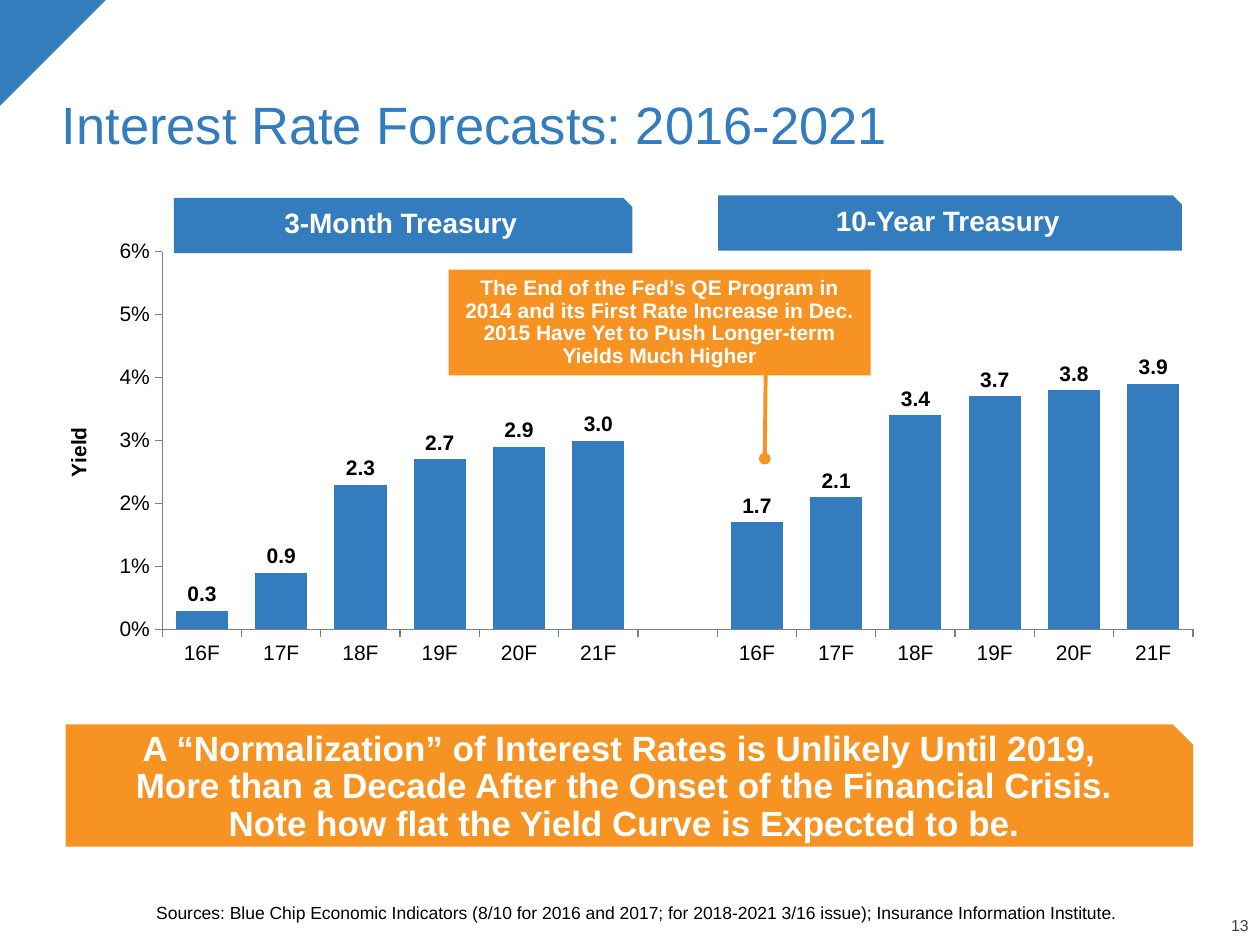
from dataclasses import dataclass
from pptx import Presentation
from pptx.chart.data import CategoryChartData
from pptx.dml.color import RGBColor as RGB
from pptx.enum.chart import XL_CHART_TYPE as Kind, XL_LABEL_POSITION as Spot, XL_TICK_MARK as Tick
from pptx.enum.shapes import MSO_CONNECTOR as Conn, MSO_SHAPE as Form
from pptx.enum.text import MSO_ANCHOR as Anchor, MSO_AUTO_SIZE as Fit, PP_ALIGN as Align
from pptx.oxml.ns import qn
from pptx.oxml.xmlchemy import OxmlElement as Elem
from pptx.util import Inches, Pt


@dataclass(frozen=True)
class Theme:
    face: str = "Arial"
    blue: RGB = RGB(0x33, 0x7D, 0xBE)
    orange: RGB = RGB(0xF6, 0x93, 0x22)
    white: RGB = RGB(255, 255, 255)
    black: RGB = RGB(0, 0, 0)
    dark: RGB = RGB(0x40, 0x40, 0x40)
    gray: RGB = RGB(0x80, 0x80, 0x80)
    title: int = 30
    lead: int = 20
    head: int = 16
    label: int = 12
    note: int = 10
    page: int = 9


T = Theme()
PAD = (0.1, 0.05, 0.1, 0.05)
DEEP = (0.1, 0.05, 0.1, 0.1)
FLUSH = (0, 0, 0, 0)


def style(font, size, color, bold=False):
    font.name = T.face
    font.size = Pt(size)
    font.color.rgb = color
    font.bold = bold


def write(shape, text, size, color, bold=False, align=Align.LEFT, anchor=Anchor.BOTTOM, pad=PAD):
    frame = shape.text_frame
    frame.auto_size = Fit.NONE
    frame.word_wrap = True
    frame.vertical_anchor = anchor
    (frame.margin_left, frame.margin_top,
     frame.margin_right, frame.margin_bottom) = map(Inches, pad)
    para = frame.paragraphs[0]
    para.text = text
    para.alignment = align
    para.line_spacing = 0.9
    style(para.font, size, color, bold)


def add_form(slide, form, box, fill):
    shape = slide.shapes.add_shape(form, *map(Inches, box))
    shape.shadow.inherit = False
    shape.fill.solid()
    shape.fill.fore_color.rgb = fill
    shape.line.fill.background()
    return shape


def add_panel(slide, form, box, fill, text, size, pad=DEEP):
    panel = add_form(slide, form, box, fill)
    write(panel, text, size, T.white, True, Align.CENTER, Anchor.MIDDLE, pad)


def add_text(slide, box, text, size, color, align=Align.LEFT):
    write(slide.shapes.add_textbox(*map(Inches, box)), text, size, color, align=align, pad=FLUSH)


def add_title(slide, box, text):
    title = slide.shapes.title
    title.left, title.top, title.width, title.height = map(Inches, box)
    write(title, text, T.title, T.blue)


def add_pin(slide, start, end):
    pin = slide.shapes.add_connector(Conn.STRAIGHT, *map(Inches, start + end))
    pin.line.color.rgb = T.orange
    pin.line.width = Pt(2.25)
    tail = Elem("a:tailEnd")
    tail.set("type", "oval")
    pin.line._get_or_add_ln().append(tail)
    pin._element.spPr.append(Elem("a:effectLst"))


def place_plot(chart, x, y, w, h):
    area = chart._chartSpace.find(".//" + qn("c:plotArea"))
    old = area.find(qn("c:layout"))
    if old is not None:
        area.remove(old)
    layout, manual = Elem("c:layout"), Elem("c:manualLayout")
    rules = (("layoutTarget", "inner"), ("xMode", "edge"), ("yMode", "edge"),
             ("x", x), ("y", y), ("w", w), ("h", h))
    for tag, val in rules:
        item = Elem("c:" + tag)
        item.set("val", str(val))
        manual.append(item)
    layout.append(manual)
    area.insert(0, layout)


def format_axes(chart):
    for axis in (chart.category_axis, chart.value_axis):
        axis.has_major_gridlines = False
        axis.major_tick_mark = Tick.OUTSIDE
        axis.minor_tick_mark = Tick.NONE
        axis.format.line.color.rgb = T.gray
        style(axis.tick_labels.font, T.label, T.black)
    scale = chart.value_axis
    scale.minimum_scale, scale.maximum_scale, scale.major_unit = 0, 6, 1
    scale.tick_labels.number_format = '0"%"'
    scale.tick_labels.number_format_is_linked = False
    frame = scale.axis_title.text_frame
    frame.text = "Yield"
    frame._txBody.bodyPr.set("rot", "-5400000")
    style(frame.paragraphs[0].font, T.label, T.black, True)


def add_bars(slide, box, cats, vals):
    data = CategoryChartData()
    data.categories = cats
    data.add_series("Series 1", vals)
    chart = slide.shapes.add_chart(Kind.COLUMN_CLUSTERED, *map(Inches, box), data).chart
    chart.has_legend = False
    chart.has_title = False
    style(chart.font, 18, T.black)
    plot = chart.plots[0]
    plot.gap_width = 52
    plot.vary_by_categories = False
    bars = plot.series[0]
    bars.format.fill.solid()
    bars.format.fill.fore_color.rgb = T.blue
    labels = bars.data_labels
    labels.show_value = True
    labels.position = Spot.OUTSIDE_END
    labels.number_format = "#,##0.0"
    labels.number_format_is_linked = False
    style(labels.font, T.label, T.black, True)
    format_axes(chart)
    place_plot(chart, 0.094, 0.069, 0.896, 0.746)


def main():
    deck = Presentation()
    deck.slide_width, deck.slide_height = Inches(10), Inches(7.5)
    slide = deck.slides.add_slide(deck.slide_layouts[5])
    add_form(slide, Form.RIGHT_TRIANGLE, (0, 0, 0.84, 0.84), T.blue).rotation = 90
    add_title(slide, (0.39, 0.25, 9.25, 1.04), "Interest Rate Forecasts: 2016-2021")

    years = [f"{year}F" for year in range(16, 22)]
    short = [0.3, 0.9, 2.3, 2.7, 2.9, 3.0]
    long = [1.7, 2.1, 3.4, 3.7, 3.8, 3.9]
    add_bars(slide, (0.43, 1.72, 9.13, 4.02), years + [""] + years, short + [None] + long)

    add_panel(slide, Form.SNIP_1_RECTANGLE, (0.52, 5.75, 8.95, 0.97), T.orange,
              "A “Normalization” of Interest Rates is Unlikely Until 2019, \v"
              "More than a Decade After the Onset of the Financial Crisis.\v"
              "Note how flat the Yield Curve is Expected to be.", T.lead)
    for box, text in (((1.38, 1.57, 3.64, 0.44), "3-Month Treasury"),
                      ((5.7, 1.55, 3.68, 0.44), "10-Year Treasury")):
        add_panel(slide, Form.SNIP_1_RECTANGLE, box, T.blue, text, T.head)

    add_pin(slide, (6.08, 2.66), (6.07, 3.64))
    add_panel(slide, Form.RECTANGLE, (3.56, 2.14, 3.35, 0.84), T.orange,
              "The End of the Fed’s QE Program in 2014 and its First Rate Increase "
              "in Dec. 2015 Have Yet to Push Longer-term Yields Much Higher", T.label, PAD)

    add_text(slide, (1.24, 6.88, 8.4, 0.45),
             "Sources: Blue Chip Economic Indicators (8/10 for 2016 and 2017; "
             "for 2018-2021 3/16 issue); Insurance Information Institute.", T.note, T.black)
    add_text(slide, (9.43, 7.29, 0.48, 0.13), "13", T.page, T.dark, Align.RIGHT)
    deck.save("out.pptx")


if __name__ == "__main__":
    main()
